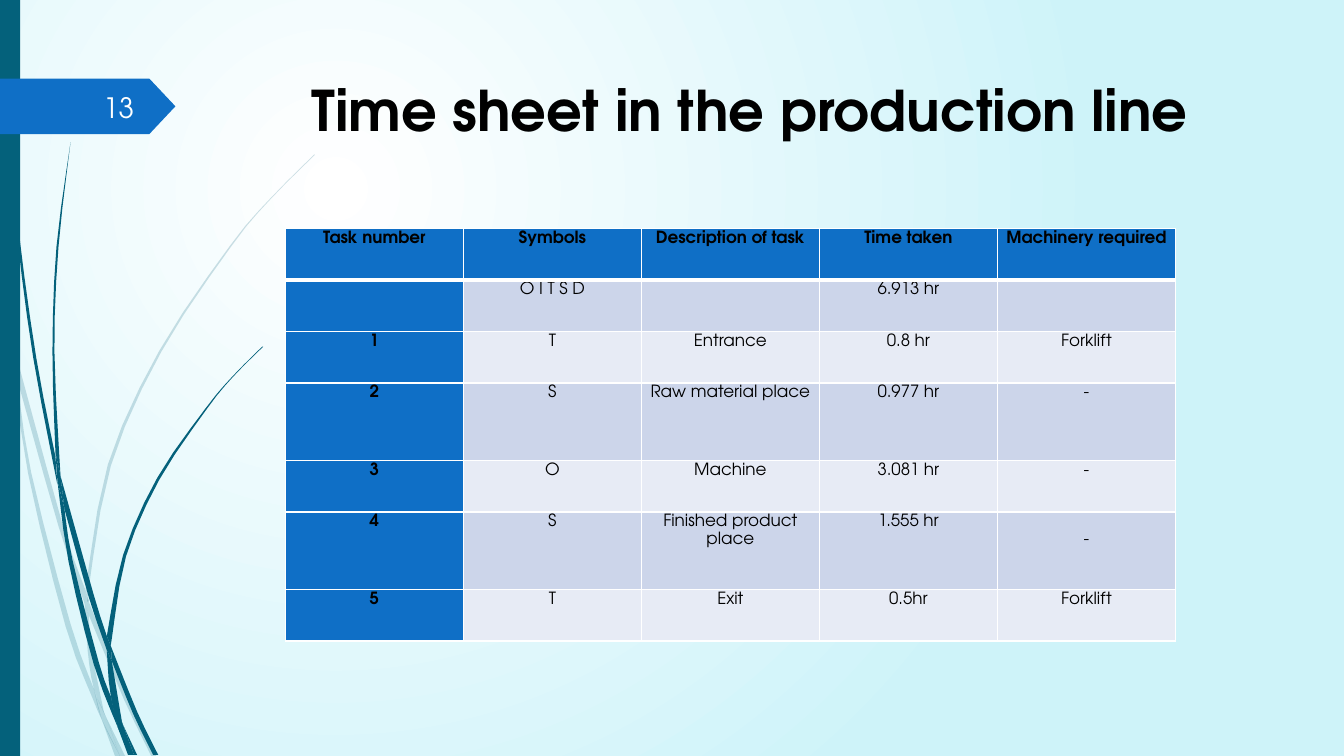
from lxml import etree
from pptx import Presentation
from pptx.dml.color import RGBColor
from pptx.enum.shapes import MSO_SHAPE
from pptx.enum.text import MSO_ANCHOR, PP_ALIGN
from pptx.oxml.ns import qn
from pptx.util import Inches, Pt

FONT = "TeX Gyre Adventor"
TEAL = RGBColor(0x04, 0x61, 0x7B)
BLUE = RGBColor(0x0F, 0x6F, 0xC6)
BAND_DARK = RGBColor(0xCC, 0xD5, 0xEA)
BAND_LIGHT = RGBColor(0xE7, 0xEB, 0xF5)
BLACK = RGBColor(0, 0, 0)
WHITE = RGBColor(0xFF, 0xFF, 0xFF)
NUMBER_WHITE = RGBColor(0xFE, 0xFF, 0xFF)
SKY = RGBColor(0xCE, 0xF3, 0xF9)

PALE_BLADES = [
    ([(0.11, 3.5), (0.09, 3.22), (0, 2.82)], [(0, 2.99), (0.1, 3.44)]),
    ([(0.17, 3.76), (0.58, 5.22), (0.84, 5.99)], [(0.85, 5.86), (0.62, 5.2), (0.14, 3.45)]),
    ([(0.88, 6.1), (1.23, 6.94), (1.5, 7.5)], [(1.55, 7.5), (1.27, 6.92), (0.92, 6.07), (0.88, 5.96)]),
    ([(1.19, 7.5), (1.24, 7.5)], [(1.05, 7.11)]),
    ([(0.11, 3.5), (0.28, 4.7), (0.65, 6.21), (0.92, 6.93), (1.01, 7.14)],
     [(0.93, 6.83), (0.7, 6.19), (0.31, 4.69), (0.17, 3.76)]),
    ([(0.84, 5.99), (0.87, 6.46), (0.93, 6.83), (1.05, 7.11)],
     [(1.03, 7.06), (0.91, 6.46), (0.88, 6.1)]),
    ([(0.88, 5.96), (0.88, 5.84), (1.1, 4.62), (1.6, 3.49), (2.29, 2.45), (2.68, 1.98), (3.12, 1.54)],
     [(3.12, 1.53), (2.68, 1.97), (2.28, 2.44), (1.58, 3.48), (1.07, 4.61), (0.85, 5.84)]),
    ([(1.01, 7.14), (1.14, 7.5)], [(1.19, 7.5)]),
    ([(0.88, 6.1), (0.88, 5.96)], [(0.85, 5.86), (0.84, 5.99)]),
    ([(0.93, 6.83), (1.01, 7.14), (1.19, 7.5)], [(1.19, 7.5), (1.05, 7.11), (0.96, 6.92)]),
]
DARK_BLADES = [
    ([(0.03, 0), (0.07, 1.1), (0.17, 2.33), (0.33, 3.55), (0.57, 4.81)],
     [(0.55, 4.53), (0.36, 3.55), (0.19, 2.32), (0.08, 1.09), (0.04, 0)]),
    ([(0.64, 5.05), (0.88, 5.92), (1.06, 6.45)], [(1.06, 6.31), (0.93, 5.9), (0.6, 4.72)]),
    ([(1.11, 6.56), (1.32, 7.08), (1.52, 7.49)], [(1.57, 7.49), (1.36, 7.06), (1.1, 6.41)]),
    ([(0.57, 4.77), (0.68, 5.57), (0.93, 6.59), (1.17, 7.22)],
     [(1.1, 6.91), (0.98, 6.57), (0.72, 5.56), (0.64, 5.05)]),
    ([(0.6, 4.72), (0.54, 3.49), (0.58, 2.45), (0.7, 1.41)],
     [(0.7, 1.41), (0.56, 2.45), (0.52, 3.49), (0.55, 4.49)]),
    ([(1.33, 7.49), (1.36, 7.49)], [(1.22, 7.19)]),
    ([(0.57, 4.77), (0.64, 5.05)], [(0.6, 4.72), (0.55, 4.49)]),
    ([(1.1, 6.41), (1.11, 6.33), (1.25, 5.52), (1.58, 4.76), (2.05, 4.06), (2.31, 3.74), (2.61, 3.44)],
     [(2.6, 3.44), (2.31, 3.73), (2.04, 4.05), (1.56, 4.74), (1.22, 5.51), (1.06, 6.31)]),
    ([(1.17, 7.22), (1.27, 7.49)], [(1.31, 7.49)]),
    ([(1.06, 6.45), (1.1, 6.91), (1.22, 7.19)], [(1.21, 7.16), (1.11, 6.56)]),
    ([(1.06, 6.45), (1.11, 6.56)], [(1.1, 6.41), (1.06, 6.31)]),
    ([(1.1, 6.91), (1.17, 7.22), (1.3, 7.49)], [(1.33, 7.49), (1.22, 7.19)]),
]

TASKS = [
    ["Task number", "Symbols", "Description of task", "Time taken", "Machinery required"],
    ["", "O I T S D", "", "6.913 hr", ""],
    ["1", "T", "Entrance", "0.8 hr", "Forklift"],
    ["2", "S", "Raw material place", "0.977 hr", "-"],
    ["3", "O", "Machine", "3.081 hr", "-"],
    ["4", "S", "Finished product place", "1.555 hr", "-"],
    ["5", "T", "Exit", "0.5hr", "Forklift"],
]
SHORT_ROW, TALL_ROW = 0.51, 0.77
TALL_ROWS = (3, 5)


def set_background(slide):
    fill = slide.background.fill
    fill.gradient()
    for stop, color, position in zip(fill.gradient_stops, (WHITE, SKY), (0, 1)):
        stop.color.rgb = color
        stop.position = position
    gradient = slide.background._cSld.find(".//" + qn("a:gradFill"))
    gradient.remove(gradient.find(qn("a:lin")))
    path_fill = etree.SubElement(gradient, qn("a:path"), path="circle")
    etree.SubElement(path_fill, qn("a:fillToRect"), l="50000", t="50000", r="100000", b="100000")


def paint(shape, color):
    shape.shadow.inherit = False
    shape.fill.solid()
    shape.fill.fore_color.rgb = color
    shape.line.fill.background()


def smooth(points, steps=3):
    padded = [points[0], *points, points[-1]]
    curve = []
    for a, b, c, d in zip(padded, padded[1:], padded[2:], padded[3:]):
        for t in (step / steps for step in range(steps)):
            curve.append(tuple(
                q + t * (r - p) / 2 + t * t * (2 * p - 5 * q + 4 * r - s) / 2
                + t ** 3 * (3 * q - p - 3 * r + s) / 2
                for p, q, r, s in zip(a, b, c, d)))
    return curve + [points[-1]]


def add_blade(slide, edges, alpha=None):
    outline = [(Inches(x), Inches(y)) for edge in edges
               for x, y in (smooth(edge) if len(edge) > 2 else edge)]
    builder = slide.shapes.build_freeform(*outline[0])
    builder.add_line_segments(outline[1:])
    blade = builder.convert_to_shape()
    paint(blade, TEAL)
    if alpha:
        color = blade._element.spPr.find(qn("a:solidFill")).find(qn("a:srgbClr"))
        etree.SubElement(color, qn("a:alpha"), val=str(alpha * 1000))


def add_block(slide, preset, left, top, width, height, color):
    block = slide.shapes.add_shape(preset, Inches(left), Inches(top), Inches(width), Inches(height))
    paint(block, color)
    return block


def write(frame, text, size, color, alignment, bold=False):
    frame.word_wrap = True
    paragraph = frame.paragraphs[0]
    paragraph.alignment = alignment
    run = paragraph.add_run()
    run.text = text
    run.font.name = FONT
    run.font.size = Pt(size)
    run.font.bold = bold
    run.font.color.rgb = color
    return paragraph


def set_borders(cell, top, bottom):
    properties = cell._tc.get_or_add_tcPr()
    sides = (("lnL", 1), ("lnR", 1), ("lnT", top), ("lnB", bottom))
    for index, (side, width) in enumerate(sides):
        line = etree.Element(qn("a:" + side), w=str(Pt(width)))
        fill = etree.SubElement(line, qn("a:solidFill"))
        etree.SubElement(fill, qn("a:srgbClr"), val=str(WHITE))
        properties.insert(index, line)


def add_task_table(slide):
    heights = [TALL_ROW if row in TALL_ROWS else SHORT_ROW for row in range(len(TASKS))]
    table = slide.shapes.add_table(
        len(TASKS), len(TASKS[0]), Inches(2.83), Inches(2.27), Inches(8.83), Inches(sum(heights))).table
    for column in table.columns:
        column.width = Inches(8.83 / len(TASKS[0]))
    for row_index, values in enumerate(TASKS):
        table.rows[row_index].height = Inches(heights[row_index])
        for column_index, text in enumerate(values):
            cell = table.cell(row_index, column_index)
            heading = row_index == 0 or column_index == 0
            cell.fill.solid()
            cell.fill.fore_color.rgb = BLUE if heading else BAND_DARK if row_index % 2 else BAND_LIGHT
            cell.margin_left = cell.margin_right = Inches(0.07)
            cell.margin_top = cell.margin_bottom = 0
            set_borders(cell, 3 if row_index == 1 else 1, 3 if row_index == 0 else 1)
            if text:
                paragraph = write(cell.text_frame, text, 12, BLACK, PP_ALIGN.CENTER, heading)
                paragraph.line_spacing = 1.15
    table.cell(5, 4).margin_top = Inches(0.18)


def add_title(slide):
    title = slide.shapes.title
    title.left, title.top = Inches(2.56), Inches(0.7)
    title.width, title.height = Inches(9.75), Inches(1.4)
    title.text_frame.vertical_anchor = MSO_ANCHOR.TOP
    write(title.text_frame, "Time sheet in the production line", 40, BLACK, PP_ALIGN.CENTER, True)


def add_slide_number(slide):
    box = slide.shapes.add_textbox(Inches(0.58), Inches(0.86), Inches(0.85), Inches(0.4))
    box.text_frame.vertical_anchor = MSO_ANCHOR.MIDDLE
    write(box.text_frame, "13", 20, NUMBER_WHITE, PP_ALIGN.RIGHT)


def main():
    presentation = Presentation()
    presentation.slide_width, presentation.slide_height = Inches(13.33), Inches(7.5)
    slide = presentation.slides.add_slide(presentation.slide_layouts[5])
    set_background(slide)
    for edges in PALE_BLADES:
        add_blade(slide, edges, alpha=20)
    for edges in DARK_BLADES:
        add_blade(slide, edges)
    add_block(slide, MSO_SHAPE.RECTANGLE, 0, 0, 0.2, 7.5, TEAL)
    tag = add_block(slide, MSO_SHAPE.PENTAGON, 0, 0.78, 1.74, 0.55, BLUE)
    tag.adjustments[0] = 0.47
    add_title(slide)
    add_task_table(slide)
    add_slide_number(slide)
    presentation.save("out.pptx")


if __name__ == "__main__":
    main()
